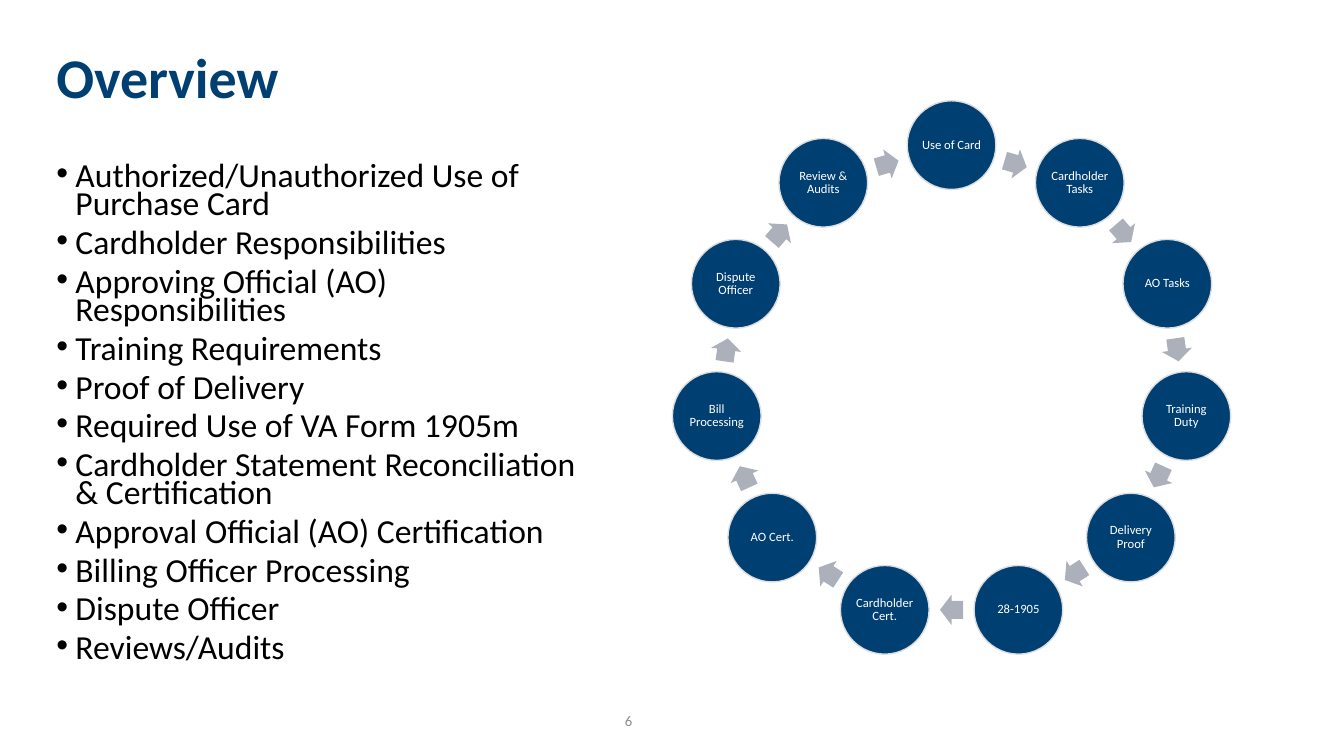
from math import cos, pi, sin

from lxml.etree import SubElement
from pptx import Presentation
from pptx.dml.color import RGBColor
from pptx.enum.shapes import MSO_SHAPE as Shape
from pptx.enum.text import MSO_ANCHOR as Anchor, PP_ALIGN as Align
from pptx.oxml.ns import qn
from pptx.util import Inches, Pt

COLORS = {
    "title": "003F72",
    "body": "000000",
    "node": "003F71",
    "node_line": "DCDDDE",
    "node_text": "FFFFFF",
    "arrow": "ABB0BB",
    "number": "8C8C8C",
}
TOPICS = [
    "Authorized/Unauthorized Use of Purchase Card",
    "Cardholder Responsibilities",
    "Approving Official (AO) Responsibilities",
    "Training Requirements",
    "Proof of Delivery",
    "Required Use of VA Form 1905m",
    "Cardholder Statement Reconciliation & Certification",
    "Approval Official (AO) Certification",
    "Billing Officer Processing",
    "Dispute Officer",
    "Reviews/Audits",
]
STEPS = [
    "Use of Card", "Cardholder Tasks", "AO Tasks", "Training Duty",
    "Delivery Proof", "28-1905", "Cardholder Cert.", "AO Cert.",
    "Bill Processing", "Dispute Officer", "Review & Audits",
]


class SlideBuilder:
    """Places elements on a grid of 40 columns by 22.5 square rows."""

    font = "Calibri"
    columns, rows = 40, 22.5

    def __init__(self, deck):
        self.cell = deck.slide_width / self.columns
        self.page = deck.slides.add_slide(deck.slide_layouts[6])

    def span(self, *cells):
        return [round(cell * self.cell) for cell in cells]

    def color(self, name):
        return RGBColor.from_string(COLORS[name])

    def style(self, para, size, color, bold=False, align=Align.LEFT, spacing=1.0):
        para.alignment = align
        para.line_spacing = spacing
        for run in para.runs:
            run.font.name = self.font
            run.font.size = Pt(size)
            run.font.bold = bold
            run.font.color.rgb = self.color(color)

    def text(self, area, lines, size, color, anchor=Anchor.MIDDLE,
             bullets=False, **look):
        frame = self.page.shapes.add_textbox(*self.span(*area)).text_frame
        frame.word_wrap = True
        frame.vertical_anchor = anchor
        frame.text = "\n".join(lines)
        for index, para in enumerate(frame.paragraphs):
            if bullets:
                self.bullet(para)
                para.space_before = Pt(7.5 if index else 0)
            self.style(para, size, color, **look)

    def bullet(self, para):
        props = para._p.get_or_add_pPr()
        props.set("marL", str(Inches(0.19)))
        props.set("indent", str(-Inches(0.19)))
        SubElement(props, qn("a:buFont"), typeface="Arial")
        SubElement(props, qn("a:buChar"), char="•")

    def shape(self, kind, center, size, fill):
        (x, y), (width, height) = center, size
        shape = self.page.shapes.add_shape(
            kind, *self.span(x - width / 2, y - height / 2, width, height))
        shape.shadow.inherit = False
        shape.fill.solid()
        shape.fill.fore_color.rgb = self.color(fill)
        shape.line.fill.background()
        return shape

    def node(self, center, diameter, label):
        circle = self.shape(Shape.OVAL, center, (diameter, diameter), "node")
        circle.line.color.rgb = self.color("node_line")
        circle.line.width = Pt(1)
        frame = circle.text_frame
        frame.word_wrap = True
        frame.vertical_anchor = Anchor.MIDDLE
        frame.margin_left = frame.margin_right = Inches(0.01)
        frame.margin_top = frame.margin_bottom = Inches(0.01)
        frame.text = label
        self.style(frame.paragraphs[0], 9, "node_text",
                   align=Align.CENTER, spacing=0.9)

    def arrow(self, center, size, degrees):
        arrow = self.shape(Shape.RIGHT_ARROW, center, size, "arrow")
        arrow.adjustments[0] = 0.6
        arrow.adjustments[1] = 0.5
        arrow.rotation = degrees

    def cycle(self, center, radius, diameter, arrow_size, labels):
        step = 2 * pi / len(labels)

        def on_ring(angle, reach):
            return center[0] + reach * sin(angle), center[1] - reach * cos(angle)

        for index, label in enumerate(labels):
            self.node(on_ring(index * step, radius), diameter, label)
            # Each arrow sits midway between two neighbouring circles
            turn = (index + 0.5) * step
            self.arrow(on_ring(turn, radius * cos(step / 2)), arrow_size,
                       turn * 180 / pi)


def main():
    deck = Presentation()
    deck.slide_width, deck.slide_height = Inches(13.33), Inches(7.5)
    builder = SlideBuilder(deck)

    # Title and topic list
    builder.text((1.38, 1.11, 31.89, 2.55), ["Overview"], 40, "title",
                 bold=True, spacing=0.9)
    builder.text((1.38, 4.77, 16.68, 15.63), TOPICS, 24, "body",
                 anchor=Anchor.TOP, bullets=True, spacing=0.7)

    # Purchase card cycle
    builder.cycle((28.32, 11.38), 7.06, 2.64, (0.69, 0.9), STEPS)

    # Slide number
    builder.text((17.58, 20.85, 2.25, 1.2), ["6"], 10.5, "number",
                 align=Align.CENTER)

    deck.save("out.pptx")


if __name__ == "__main__":
    main()
